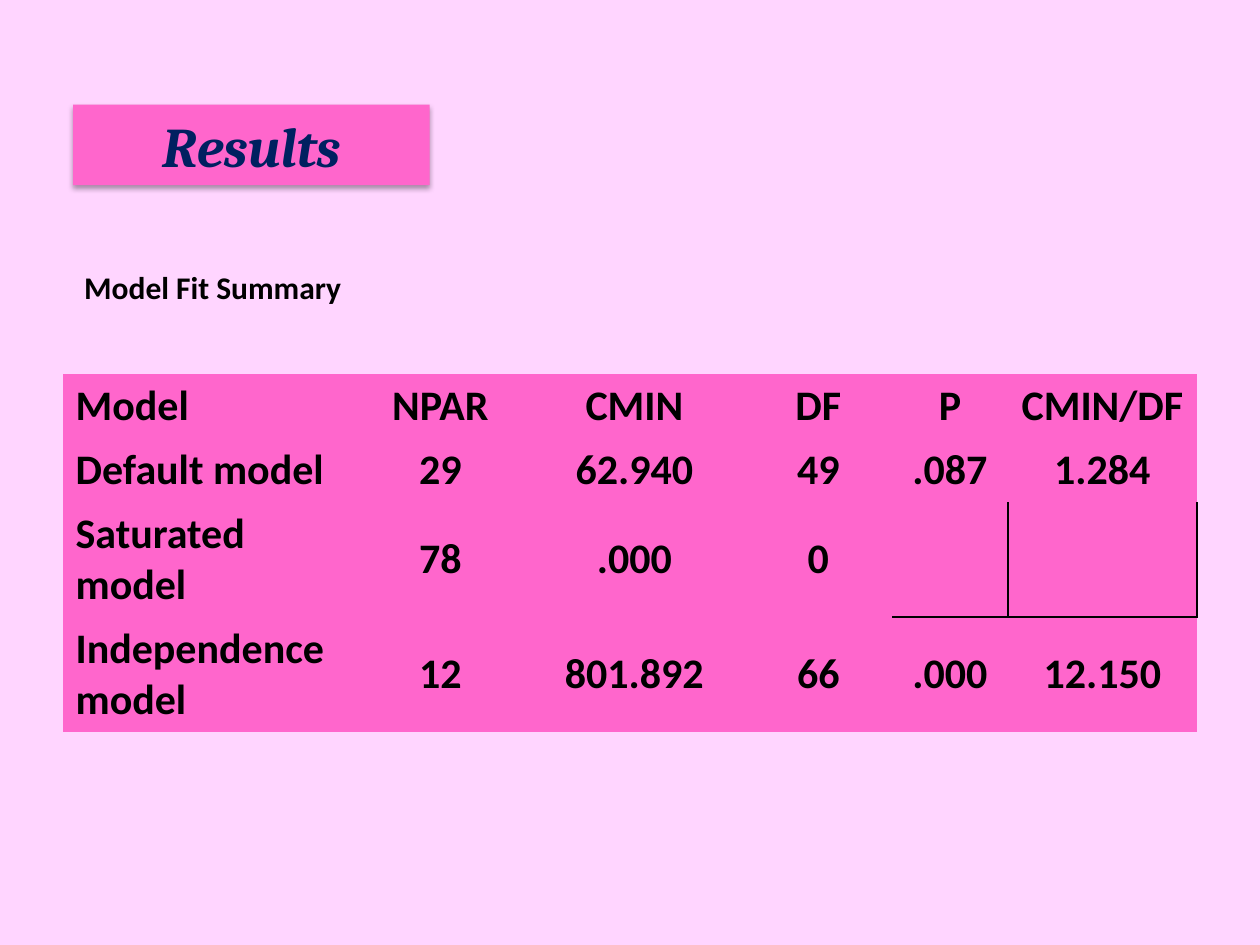
import pptx
import pptx.util
import pptx.dml.color
import pptx.enum.text
import pptx.oxml
import pptx.oxml.ns
from pptx.util import Inches

PALE_PINK = pptx.dml.color.RGBColor(0xFF, 0xD5, 0xFF)
PINK = pptx.dml.color.RGBColor(0xFF, 0x66, 0xCC)
NAVY = pptx.dml.color.RGBColor(0x00, 0x20, 0x60)
BLACK = pptx.dml.color.RGBColor(0, 0, 0)

TITLE_FONT = {"name": "Cambria", "size": pptx.util.Pt(32), "bold": True, "italic": True}
CAPTION_FONT = {"name": "Calibri", "size": pptx.util.Pt(18), "bold": True}
CELL_FONT = {"name": "Calibri", "size": pptx.util.Pt(24), "bold": True}

ALIGN = pptx.enum.text.PP_ALIGN
MIDDLE = pptx.enum.text.MSO_ANCHOR.MIDDLE
NO_GRID_STYLE = "{2D5ABB26-0587-4C30-8999-92F81FD0307C}"

FIT_ROWS = [
    ("Model", "NPAR", "CMIN", "DF", "P", "CMIN/DF"),
    ("Default model", "29", "62.940", "49", ".087", "1.284"),
    ("Saturated model", "78", ".000", "0", "", ""),
    ("Independence model", "12", "801.892", "66", ".000", "12.150"),
]
COLUMN_WIDTHS = (2.33, 1.33, 1.75, 1.17, 0.92, 1.5)
ROW_HEIGHTS = (0.5, 0.5, 0.9, 0.9)


def write(paragraph, text, font_values, color, align=ALIGN.LEFT):
    paragraph.text = text
    paragraph.alignment = align
    for key, value in font_values.items():
        setattr(paragraph.font, key, value)
    paragraph.font.color.rgb = color


def add_xml(parent, xml):
    parent.append(pptx.oxml.parse_xml(xml))


def place_title(slide, left, top, width, height):
    title = slide.shapes.title
    box = {"left": left, "top": top, "width": width, "height": height}
    for key, value in box.items():
        setattr(title, key, Inches(value))
    title.fill.solid()
    title.fill.fore_color.rgb = PINK
    title.text_frame.auto_size = pptx.enum.text.MSO_AUTO_SIZE.NONE
    title.text_frame.vertical_anchor = MIDDLE
    write(title.text_frame.paragraphs[0], "Results", TITLE_FONT, NAVY, ALIGN.CENTER)
    # Soft shadow straight below
    add_xml(title.element.spPr, f"""
        <a:effectLst {pptx.oxml.ns.nsdecls('a')}>
          <a:outerShdw blurRad="39370" dist="22860" dir="5400000" rotWithShape="0">
            <a:srgbClr val="000000"><a:alpha val="35000"/></a:srgbClr>
          </a:outerShdw>
        </a:effectLst>""".strip())


def add_caption(slide, left, top, width, height):
    caption = slide.shapes.add_textbox(*map(Inches, (left, top, width, height)))
    caption.text_frame.word_wrap = False
    write(caption.text_frame.paragraphs[0], "Model Fit Summary", CAPTION_FONT, BLACK)


def add_border(cell, side):
    add_xml(cell._tc.get_or_add_tcPr(), f"""
        <a:{side} {pptx.oxml.ns.nsdecls('a')} w="12700">
          <a:solidFill><a:srgbClr val="{BLACK}"/></a:solidFill>
        </a:{side}>""".strip())


def add_fit_table(slide, left, top):
    frame = slide.shapes.add_table(
        len(FIT_ROWS), len(COLUMN_WIDTHS), Inches(left), Inches(top),
        Inches(sum(COLUMN_WIDTHS)), Inches(sum(ROW_HEIGHTS)))
    table = frame.table
    table.first_row = table.horz_banding = False
    table._tbl.tblPr.find(pptx.oxml.ns.qn("a:tableStyleId")).text = NO_GRID_STYLE
    for column, width in zip(table.columns, COLUMN_WIDTHS):
        column.width = Inches(width)
    for row, height, values in zip(table.rows, ROW_HEIGHTS, FIT_ROWS):
        row.height = Inches(height)
        for index, (cell, value) in enumerate(zip(row.cells, values)):
            cell.vertical_anchor = MIDDLE
            # Only cells without a value are ruled
            if value:
                write(cell.text_frame.paragraphs[0], value, CELL_FONT, BLACK,
                      ALIGN.CENTER if index else ALIGN.LEFT)
            else:
                for side in ("lnR", "lnB"):
                    add_border(cell, side)
            cell.fill.solid()
            cell.fill.fore_color.rgb = PINK


def main():
    presentation = pptx.Presentation()
    presentation.slide_width, presentation.slide_height = Inches(10), Inches(7.5)
    slide = presentation.slides.add_slide(presentation.slide_layouts[5])
    slide.background.fill.solid()
    slide.background.fill.fore_color.rgb = PALE_PINK

    place_title(slide, 0.58, 0.83, 2.83, 0.64)
    add_fit_table(slide, 0.5, 2.97)
    add_caption(slide, 0.57, 2.08, 2.26, 0.4)
    presentation.save("out.pptx")


if __name__ == "__main__":
    main()
